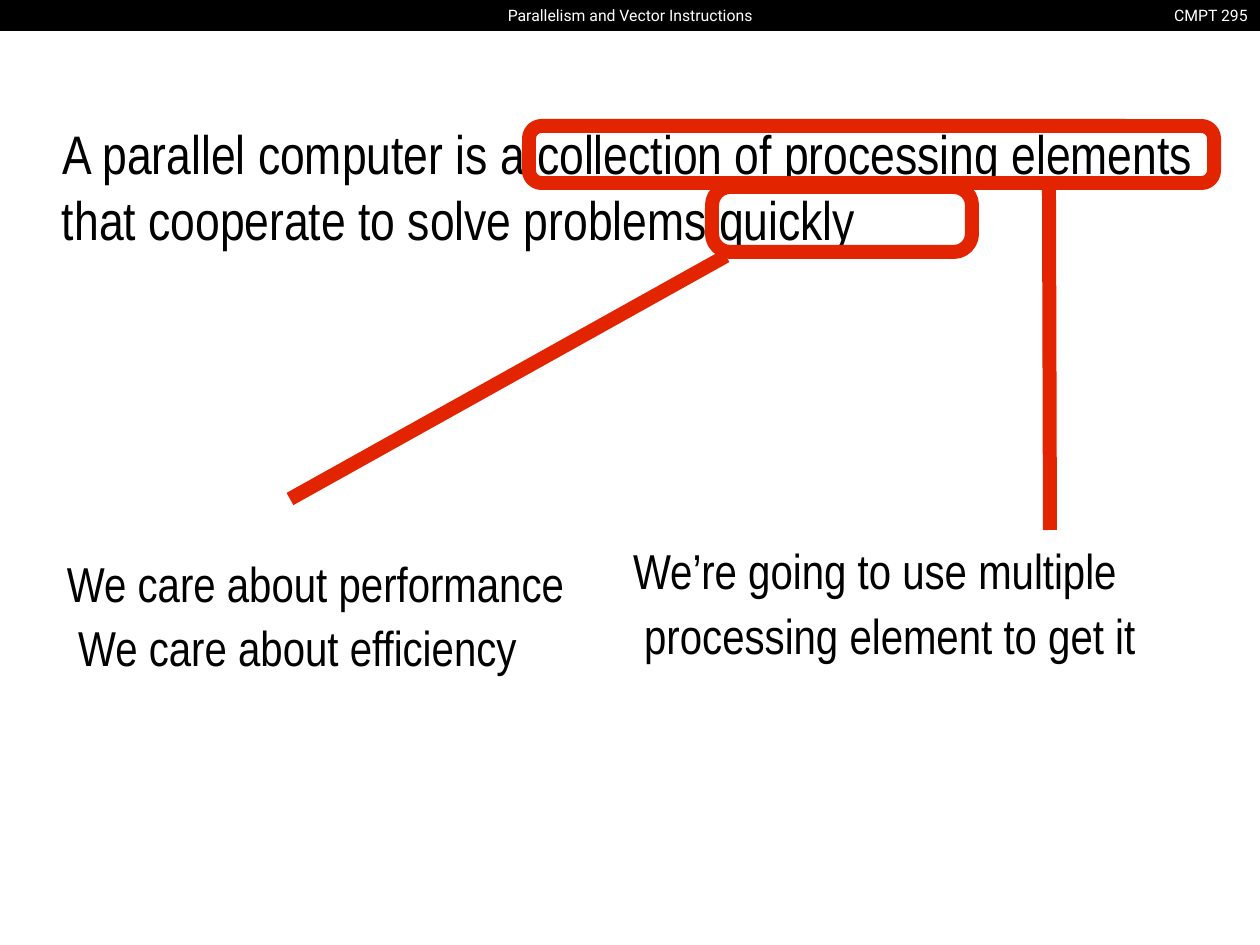
from pptx import Presentation
from pptx.dml.color import RGBColor
from pptx.enum.shapes import MSO_CONNECTOR, MSO_SHAPE
from pptx.enum.text import PP_ALIGN
from pptx.oxml.ns import qn
from pptx.util import Emu, Pt

PX = 914400 / 126
BLACK = RGBColor(0x00, 0x00, 0x00)
WHITE = RGBColor(0xFF, 0xFF, 0xFF)
RED = RGBColor(0xE3, 0x24, 0x00)


def px(*lengths):
    return [Emu(round(length * PX)) for length in lengths]


def add_text(box, lines, font, size, color, align=PP_ALIGN.LEFT, wrap=True):
    """Add a text box with one paragraph per line and return its paragraphs."""
    frame = slide.shapes.add_textbox(*px(*box)).text_frame
    frame.word_wrap = wrap
    if wrap:
        frame.margin_left = frame.margin_top = 0
        frame.margin_right = frame.margin_bottom = 0
    frame.text = "\n".join(lines)
    for paragraph in frame.paragraphs:
        paragraph.alignment = align
        paragraph.font.name = font
        paragraph.font.size = Pt(size)
        paragraph.font.color.rgb = color
    return frame.paragraphs


prs = Presentation()
prs.slide_width, prs.slide_height = px(1260, 945)
slide = prs.slides.add_slide(prs.slide_layouts[6])

# Header
header = slide.shapes.add_shape(MSO_SHAPE.RECTANGLE, *px(0, 0, 1260, 31))
header.shadow.inherit = False
header.fill.solid()
header.fill.fore_color.rgb = BLACK
header.line.fill.background()
add_text((1158, 0, 102, 31), ["CMPT 295"], "Roboto", 9, WHITE, PP_ALIGN.RIGHT, wrap=False)
add_text((495, 0, 270, 31), ["Parallelism and Vector Instructions"],
         "Roboto", 9, WHITE, PP_ALIGN.CENTER, wrap=False)

# Definition and the two remarks: box, lines, size, left margin, first-line indent
passages = [
    ((62, 120, 1172, 129),
     ["A parallel computer is a collection of processing elements "
      "that cooperate to solve problems quickly"], 31, 0, 1),
    ((57, 495, 616, 183),
     ["We care about performance", " We care about efficiency"], 28, 0, 10),
    ((630, 541, 572, 123),
     ["We’re going to use multiple", " processing element to get it"], 28, 144, -141),
]
definition, goals, means = [], [], []
for paragraphs, (box, lines, size, margin, indent) in zip((definition, goals, means), passages):
    paragraphs.extend(add_text(box, lines, "Arial Narrow", size, BLACK))
    for paragraph in paragraphs:
        properties = paragraph._p.get_or_add_pPr()
        properties.set("marL", str(px(margin)[0]))
        properties.set("indent", str(px(indent)[0]))
definition[0].line_spacing = 1.01
goals[0].line_spacing = Pt(67)
for paragraph in goals + means:
    paragraph.space_before = Pt(3)

# Highlighted phrases, each with a line to its remark
highlights = [
    ((712, 187, 260, 65), 0.28, (726, 256, 290, 499)),
    ((529, 126, 685, 57), 0.22, (1049, 189, 1050, 530)),
]
for frame_box, corner, ends in highlights:
    highlight = slide.shapes.add_shape(MSO_SHAPE.ROUNDED_RECTANGLE, *px(*frame_box))
    highlight.adjustments[0] = corner
    highlight.shadow.inherit = False
    highlight.fill.background()
    leader = slide.shapes.add_connector(MSO_CONNECTOR.STRAIGHT, *px(*ends))
    leader_properties = leader._element.spPr
    for outlined in (highlight, leader):
        outlined.line.color.rgb = RED
        outlined.line.width = Pt(8)
    leader_properties.append(leader_properties.makeelement(qn("a:effectLst"), {}))

prs.save("out.pptx")
